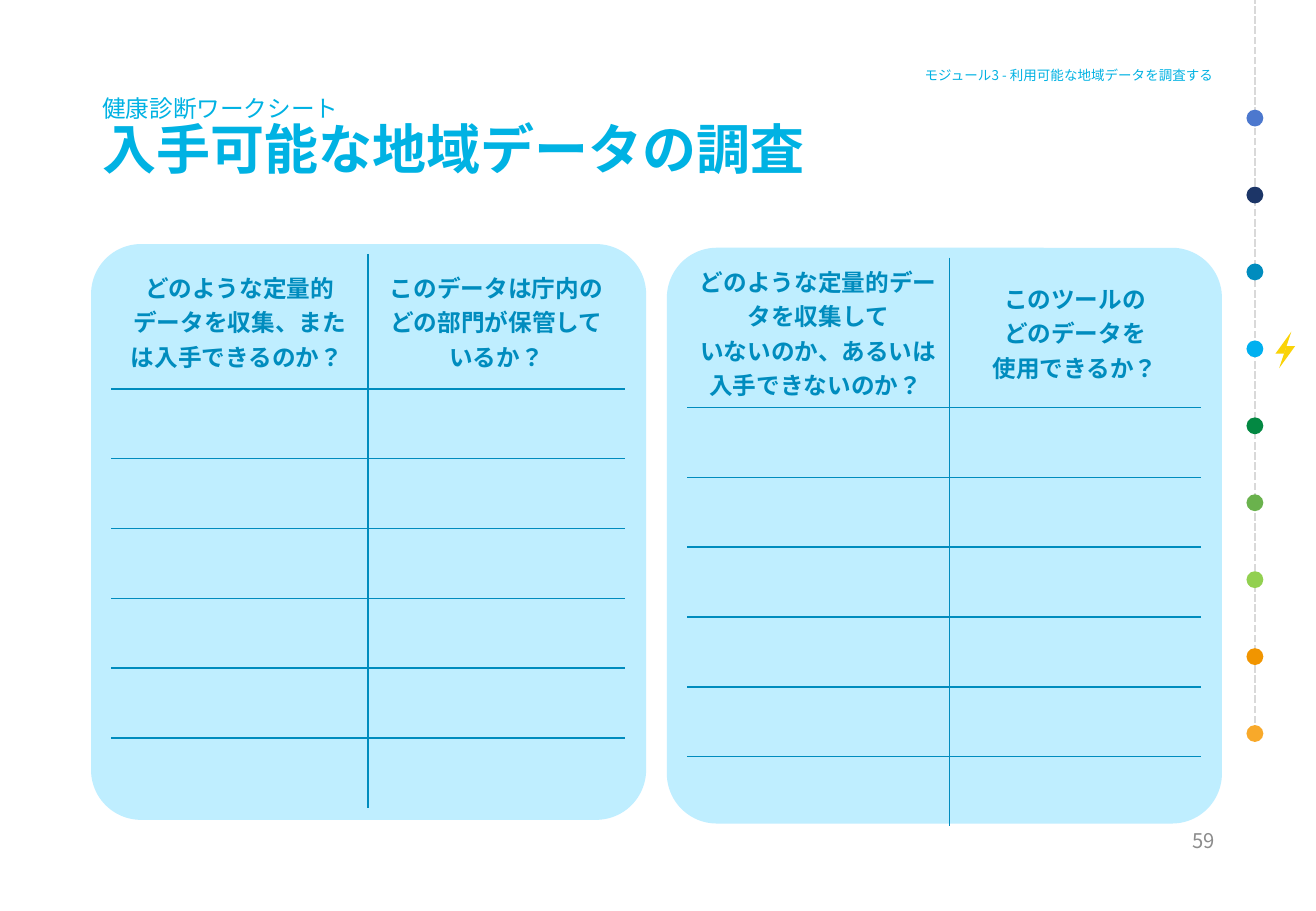
from dataclasses import dataclass

from lxml.etree import SubElement
from pptx import Presentation
from pptx.dml.color import RGBColor
from pptx.enum.dml import MSO_LINE
from pptx.enum.lang import MSO_LANGUAGE_ID as Language
from pptx.enum.shapes import MSO_CONNECTOR as Connector, MSO_SHAPE as Preset
from pptx.enum.text import MSO_ANCHOR as Anchor, MSO_AUTO_SIZE as AutoSize, PP_ALIGN as Align
from pptx.oxml.ns import qn
from pptx.util import Pt

FONT = "Noto Sans CJK JP"
CYAN, BLUE, PALE, GREY, YELLOW = "00B2E3", "008CBE", "BFEEFF", "8C8C8C", "FAD307"
HEADER_HEIGHT, ROW_HEIGHT, ANSWER_ROWS = 80, 41.4, 6
PANEL_WIDTH, PANEL_HEIGHT = 329, 341.3
TIMELINE_X, FIRST_STAGE_Y, STAGE_STEP, DOT = 743.8, 70, 45.6, 10
STAGE_COLORS = ["4C78CE", "1C3567", "008CBE", "00B0F0", "038842",
                "6AB24D", "92D050", "F19500", "F8A92A"]


@dataclass
class Worksheet:
    left: float
    top: float
    column_widths: tuple[float, float]
    questions: tuple[list[str], list[str]]


WORKSHEETS = [
    Worksheet(54, 144.7, (152.2, 152.2), (
        ["どのような定量的データを収集、または入手できるのか？ "],
        ["このデータは庁内の", "どの部門が保管しているか？"])),
    Worksheet(395.3, 146.9, (155.5, 148.9), (
        ["どのような定量的データを収集して", "いないのか、あるいは入手できないのか？ "],
        ["このツールの", "どのデータを", "使用できるか？"])),
]


def rgb(color: str) -> RGBColor:
    return RGBColor.from_string(color)


def apply(target, values: dict) -> None:
    for name, value in values.items():
        setattr(target, name, value)


def add_text(paragraph, text: str, size: float, color: str, bold: bool = False) -> None:
    run = paragraph.add_run()
    run.text = text
    apply(run.font, {"size": Pt(size), "bold": bold, "name": FONT,
                     "language_id": Language.JAPANESE})
    run.font.color.rgb = rgb(color)
    SubElement(run.font._element, qn("a:ea"), typeface=FONT)


def place(shape, left: float, top: float, width: float, height: float) -> None:
    apply(shape, {"left": Pt(left), "top": Pt(top), "width": Pt(width), "height": Pt(height)})


def paint(shape, color: str) -> None:
    shape.fill.solid()
    shape.fill.fore_color.rgb = rgb(color)
    shape.line.fill.background()
    shape.shadow.inherit = False


def add_filled(shapes, preset, left: float, top: float, width: float, height: float, color: str):
    shape = shapes.add_shape(preset, Pt(left), Pt(top), Pt(width), Pt(height))
    paint(shape, color)
    return shape


def set_borders(cell, visible: dict[str, bool]) -> None:
    properties = cell._tc.get_or_add_tcPr()
    for side, shown in visible.items():
        border = SubElement(properties, qn(f"a:ln{side}"), w=str(Pt(1)))
        if shown:
            fill = SubElement(border, qn("a:solidFill"))
            SubElement(fill, qn("a:srgbClr"), val=BLUE)
        else:
            SubElement(border, qn("a:noFill"))


def add_worksheet(shapes, sheet: Worksheet) -> None:
    panel = add_filled(shapes, Preset.ROUNDED_RECTANGLE, sheet.left, sheet.top,
                       PANEL_WIDTH, PANEL_HEIGHT, PALE)
    panel.adjustments[0] = 0.09
    row_count = ANSWER_ROWS + 1
    table = shapes.add_table(
        row_count, 2, Pt(sheet.left + 12), Pt(sheet.top + 5.8), Pt(sum(sheet.column_widths)),
        Pt(HEADER_HEIGHT + ANSWER_ROWS * ROW_HEIGHT)).table
    apply(table, {"first_row": False, "horz_banding": False})
    for column, width in zip(table.columns, sheet.column_widths):
        column.width = Pt(width)
    for index, row in enumerate(table.rows):
        row.height = Pt(ROW_HEIGHT if index else HEADER_HEIGHT)
        for side, cell in enumerate(row.cells):
            set_borders(cell, {"L": side == 1, "R": side == 0,
                               "T": index > 0, "B": index < row_count - 1})
            cell.fill.background()
    # Questions in the header row
    for cell, question in zip(table.rows[0].cells, sheet.questions):
        cell.vertical_anchor = Anchor.MIDDLE
        for number, line in enumerate(question):
            paragraph = cell.text_frame.add_paragraph() if number else cell.text_frame.paragraphs[0]
            paragraph.alignment = Align.CENTER
            add_text(paragraph, line, 14, BLUE, bold=True)


def add_timeline(shapes) -> None:
    last_y = FIRST_STAGE_Y + STAGE_STEP * (len(STAGE_COLORS) - 1)
    track = shapes.add_connector(Connector.STRAIGHT, Pt(TIMELINE_X), Pt(last_y), Pt(TIMELINE_X), Pt(0))
    apply(track.line, {"width": Pt(1.5), "dash_style": MSO_LINE.SQUARE_DOT})
    track.line.color.rgb = rgb("D9D9D9")
    SubElement(track._element.spPr, qn("a:effectLst"))
    for index, color in enumerate(STAGE_COLORS):
        add_filled(shapes, Preset.OVAL, TIMELINE_X - DOT / 2,
                   FIRST_STAGE_Y + index * STAGE_STEP - DOT / 2, DOT, DOT, color)


def add_lightning(shapes, center_x: float, center_y: float) -> None:
    half = [(-0.6, 2.2), (-5.8, 2.2), (3.6, -10.8), (0, 0)]
    for turn in (1, -1):
        points = [(Pt(center_x + turn * x), Pt(center_y + turn * y)) for x, y in half]
        builder = shapes.build_freeform(*points[0], scale=1.0)
        builder.add_line_segments(points[1:], close=True)
        paint(builder.convert_to_shape(), YELLOW)


def main() -> None:
    deck = Presentation()
    apply(deck, {"slide_width": Pt(780), "slide_height": Pt(540)})
    slide = deck.slides.add_slide(deck.slide_layouts[1])
    shapes = slide.shapes

    # Title
    title = shapes.title
    place(title, 53.3, 54, 658, 77.8)
    apply(title.text_frame, {"vertical_anchor": Anchor.TOP, "auto_size": AutoSize.NONE})
    heading = title.text_frame.paragraphs[0]
    apply(heading, {"alignment": Align.LEFT, "line_spacing": 0.9, "space_before": Pt(0)})
    add_text(heading, "健康診断ワークシート", 14, CYAN)
    heading.add_line_break()
    add_text(heading, "入手可能な地域データの調査", 32, CYAN, bold=True)

    # Module name
    module = slide.placeholders[1]
    place(module, 480.2, 36, 246.2, 17.3)
    apply(module.text_frame, {"vertical_anchor": Anchor.BOTTOM, "auto_size": AutoSize.NONE})
    module_line = module.text_frame.paragraphs[0]
    apply(module_line, {"alignment": Align.RIGHT, "line_spacing": 0.9, "space_before": Pt(0)})
    list_format = module_line._p.get_or_add_pPr()
    apply_indent = {"marL": "0", "indent": "0"}
    for name, value in apply_indent.items():
        list_format.set(name, value)
    SubElement(list_format, qn("a:buNone"))
    add_text(module_line, "モジュール3 - 利用可能な地域データを調査する", 8, CYAN)

    # Worksheets
    for sheet in WORKSHEETS:
        add_worksheet(shapes, sheet)

    # Page number
    page = shapes.add_textbox(Pt(689.8), Pt(487.4), Pt(37.4), Pt(28.8)).text_frame
    page.word_wrap = True
    page.paragraphs[0].alignment = Align.RIGHT
    add_text(page.paragraphs[0], "59", 12, GREY)

    # Progress through the modules
    add_timeline(shapes)
    add_lightning(shapes, 761.8, 207.4)

    deck.save("out.pptx")


if __name__ == "__main__":
    main()
